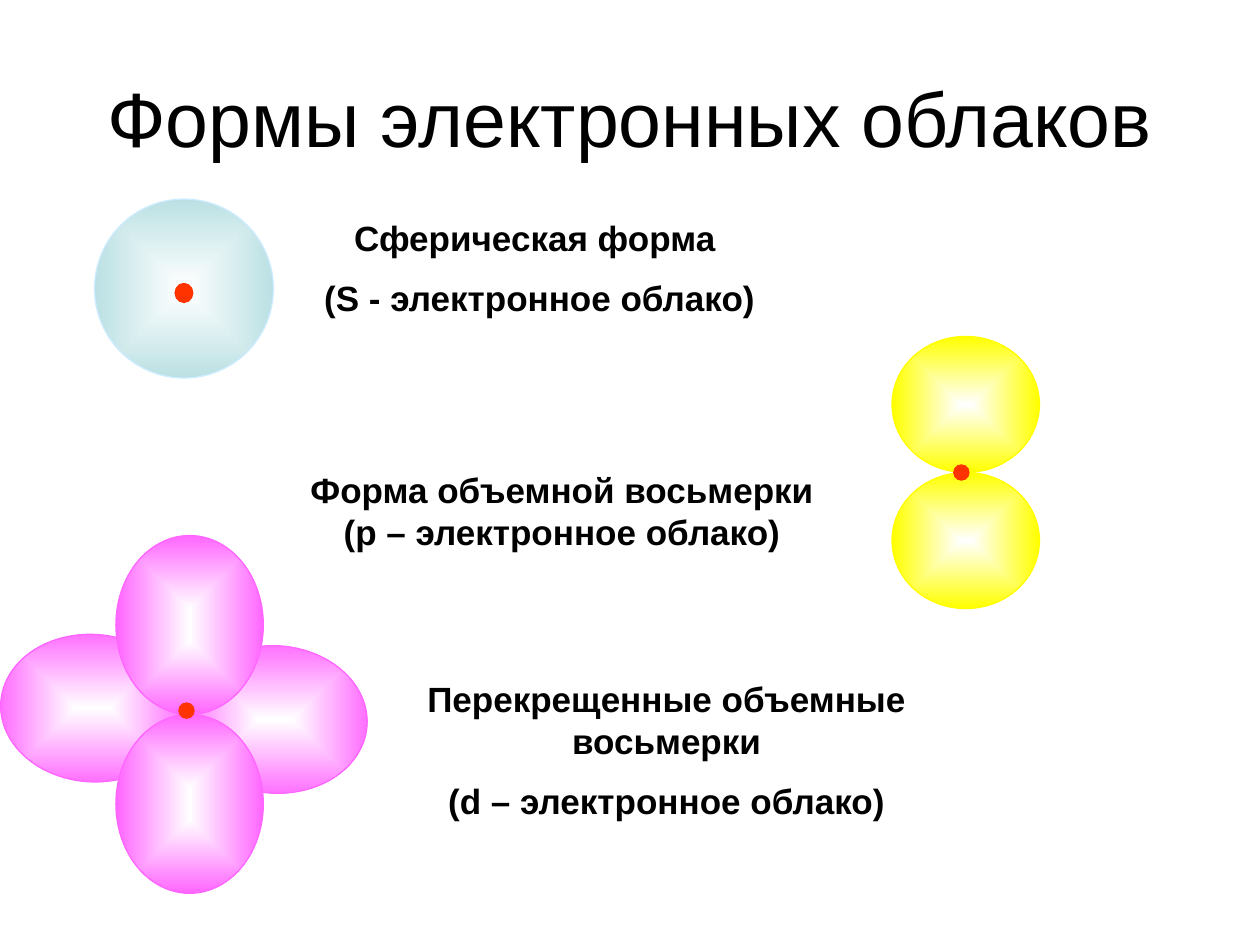
from lxml.etree import SubElement
from pptx import Presentation
from pptx.dml.color import RGBColor
from pptx.enum.shapes import MSO_SHAPE as Shape
from pptx.enum.text import MSO_ANCHOR as Anchor, PP_ALIGN as Align
from pptx.oxml.ns import qn
from pptx.util import Inches, Pt

BLACK = RGBColor(0x00, 0x00, 0x00)
WHITE = RGBColor(0xFF, 0xFF, 0xFF)
RED = RGBColor(0xFF, 0x33, 0x00)
TEAL = RGBColor(0xBB, 0xE0, 0xE3)
SKY = RGBColor(0xCC, 0xEC, 0xFF)
YELLOW = RGBColor(0xFF, 0xFF, 0x00)
PINK = RGBColor(0xFF, 0x66, 0xFF)


class Deck:
    font = "Arial"

    def __init__(self):
        self.prs = Presentation()
        self.prs.slide_width, self.prs.slide_height = Inches(10), Inches(7.5)
        self.slide = self.prs.slides.add_slide(self.prs.slide_layouts[5])

    def format(self, par, size, bold):
        par.alignment = Align.CENTER
        for run in par.runs:
            run.font.name, run.font.size = self.font, Pt(size)
            run.font.bold, run.font.color.rgb = bold, BLACK

    def title(self, text):
        box = self.slide.shapes.title
        box.left, box.top = Inches(0.5), Inches(0.3)
        box.width, box.height = Inches(9), Inches(1.25)
        frame = box.text_frame
        frame.text = text
        frame.vertical_anchor = Anchor.MIDDLE
        self.format(frame.paragraphs[0], 44, False)

    def label(self, left, top, width, height, lines):
        box = self.slide.shapes.add_textbox(
            Inches(left), Inches(top), Inches(width), Inches(height))
        frame = box.text_frame
        frame.word_wrap = True
        frame.text = "\n".join(lines)
        for i, par in enumerate(frame.paragraphs):
            if i:
                par.space_before = Pt(10)
            self.format(par, 20, True)

    def group(self):
        return self.slide.shapes.add_group_shape()

    def oval(self, group, left, top, width, height, edge, turn=0):
        oval = group.shapes.add_shape(
            Shape.OVAL, Inches(left), Inches(top), Inches(width), Inches(height))
        oval.rotation = turn
        oval.shadow.inherit = False
        oval.line.color.rgb, oval.line.width = edge, Pt(0.75)
        return oval

    def cloud(self, group, left, top, width, height, color, edge=None, turn=0):
        """Add an oval that fades from a white centre to the colour."""
        oval = self.oval(group, left, top, width, height, edge or color, turn)
        oval.fill.gradient()
        for stop, tone in zip(oval.fill.gradient_stops, (WHITE, color)):
            stop.color.rgb = tone
        oval.fill.gradient_stops[0].position = 0
        oval.fill.gradient_stops[1].position = 1
        grad = oval.element.spPr.find(qn("a:gradFill"))
        grad.remove(grad.find(qn("a:lin")))
        path = SubElement(grad, qn("a:path"), path="shape")
        SubElement(path, qn("a:fillToRect"),
                   {side: "50000" for side in "ltrb"})

    def core(self, group, left, top, width=0.12, height=0.12):
        dot = self.oval(group, left, top, width, height, RED)
        dot.fill.solid()
        dot.fill.fore_color.rgb = RED


def main():
    deck = Deck()
    deck.title("Формы электронных облаков")

    deck.label(2.33, 1.67, 3.83, 0.93,
               ["Сферическая форма", " (S - электронное облако)"])
    sphere = deck.group()
    deck.cloud(sphere, 0.75, 1.58, 1.42, 1.42, TEAL, SKY)
    deck.core(sphere, 1.39, 2.25, 0.14, 0.15)

    eight = deck.group()
    for top in (2.67, 3.75):
        deck.cloud(eight, 7.08, top, 1.17, 1.08, YELLOW)
    deck.core(eight, 7.57, 3.69)
    deck.label(2.25, 3.67, 4.42, 0.77,
               ["Форма объемной восьмерки (p – электронное облако)"])

    cross = deck.group()
    for left, top in ((1.6, 4.98), (0.15, 4.89)):
        deck.cloud(cross, left, top, 1.17, 1.46, PINK, turn=273.7)
    for top in (5.67, 4.25):
        deck.cloud(cross, 0.92, top, 1.17, 1.42, PINK)
    deck.core(cross, 1.42, 5.58)
    deck.label(3.08, 5.33, 4.42, 1.27,
               ["Перекрещенные объемные восьмерки",
                "(d – электронное облако)"])

    deck.prs.save("out.pptx")


if __name__ == "__main__":
    main()
